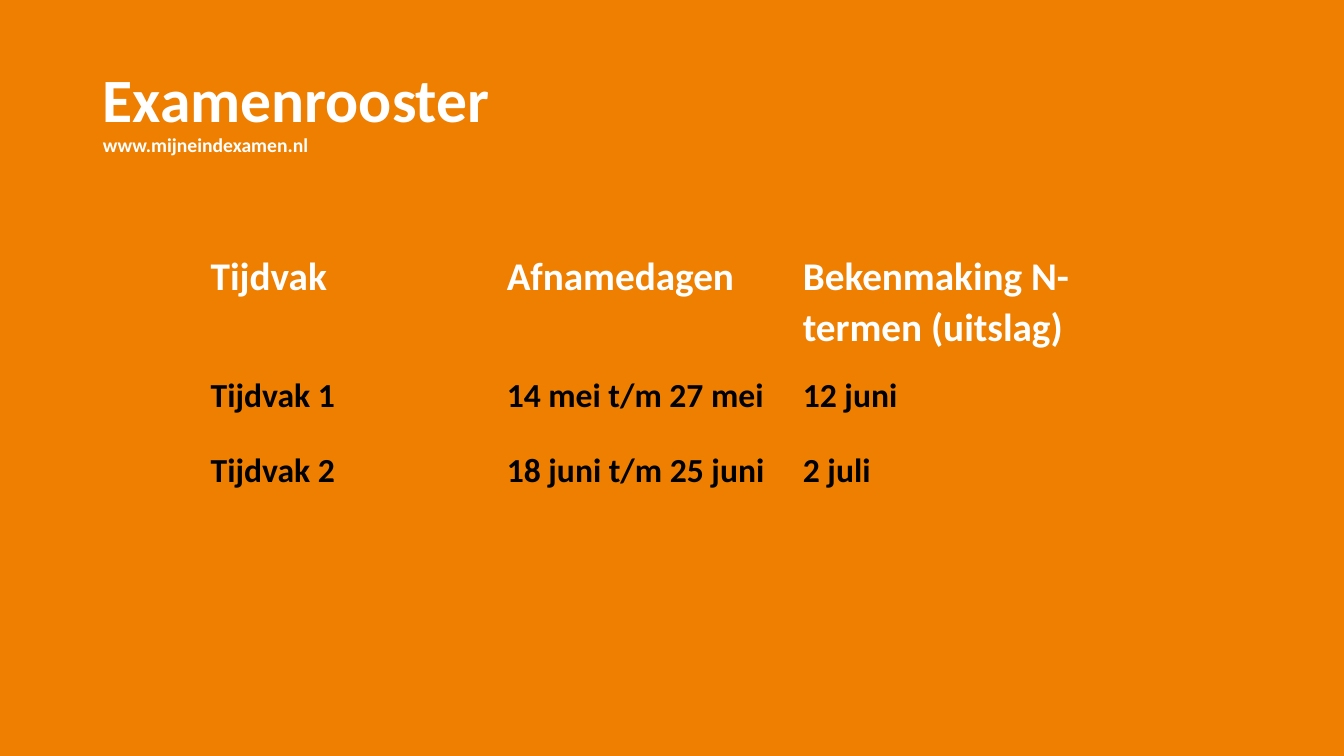
from lxml import etree
from pptx import Presentation
from pptx import util as u
from pptx.dml.color import RGBColor
from pptx.enum import text
from pptx.oxml.ns import qn

COLORS = {"orange": "EE7F00", "white": "FFFFFF", "black": "000000"}
FONT = "Calibri"
SCHEDULE = [
    ["Tijdvak", "Afnamedagen", "Bekenmaking N-termen (uitslag)"],
    ["Tijdvak 1", "14 mei t/m 27 mei", "12 juni"],
    ["Tijdvak 2", "18 juni t/m 25 juni", "2 juli"],
    ["", "", ""],
]
ROW_HEIGHTS = [1.22, 0.74, 0.6, 0.6]


def add_run(paragraph, words, size, color="white", bold=True):
    run = paragraph.add_run()
    run.text = words
    run.font.name = FONT
    run.font.size = u.Pt(size)
    run.font.bold = bold
    run.font.color.rgb = RGBColor.from_string(COLORS[color])


def add_title(slide, left, top, width, height):
    title = slide.shapes.title
    title.left, title.top = u.Inches(left), u.Inches(top)
    title.width, title.height = u.Inches(width), u.Inches(height)
    frame = title.text_frame
    frame.word_wrap = True
    frame.auto_size = text.MSO_AUTO_SIZE.NONE
    frame.vertical_anchor = text.MSO_ANCHOR.MIDDLE
    paragraph = frame.paragraphs[0]
    paragraph.alignment = text.PP_ALIGN.LEFT
    paragraph.line_spacing = 0.9
    add_run(paragraph, "Examenrooster", 44)
    paragraph.add_line_break()
    add_run(paragraph, "www.mijneindexamen.nl", 14)


def set_borders(cell, color, width=0.5):
    properties = cell._tc.get_or_add_tcPr()
    for side in ("a:lnL", "a:lnR", "a:lnT", "a:lnB"):
        line = etree.SubElement(properties, qn(side), w=str(u.Pt(width)))
        fill = etree.SubElement(line, qn("a:solidFill"))
        etree.SubElement(fill, qn("a:srgbClr"), val=COLORS[color])


def format_cell(cell, words, size, color):
    set_borders(cell, "orange")
    cell.fill.background()
    cell.margin_left = cell.margin_right = u.Inches(0.07)
    cell.margin_top = cell.margin_bottom = 0
    if words:
        paragraph = cell.text_frame.paragraphs[0]
        paragraph.line_spacing = 1.07
        paragraph.space_after = u.Pt(8)
        add_run(paragraph, words, size, color)


def add_schedule(slide, left, top, width):
    columns = len(SCHEDULE[0])
    table = slide.shapes.add_table(
        len(SCHEDULE), columns, u.Inches(left), u.Inches(top),
        u.Inches(width), u.Inches(sum(ROW_HEIGHTS))).table
    table.horz_banding = False
    for column in table.columns:
        column.width = u.Inches(width / columns)
    for row_index, (row, height) in enumerate(zip(SCHEDULE, ROW_HEIGHTS)):
        table.rows[row_index].height = u.Inches(height)
        size, color = (24, "black") if row_index else (28, "white")
        for column_index, words in enumerate(row):
            format_cell(table.cell(row_index, column_index), words, size, color)


def main():
    presentation = Presentation()
    presentation.slide_width = u.Inches(13.33)
    presentation.slide_height = u.Inches(7.5)
    slide = presentation.slides.add_slide(presentation.slide_layouts[5])
    background = slide.background.fill
    background.solid()
    background.fore_color.rgb = RGBColor.from_string(COLORS["orange"])
    add_title(slide, 0.92, 0.4, 11.5, 1.45)
    add_schedule(slide, 2.02, 2.48, 8.81)
    presentation.save("out.pptx")


if __name__ == "__main__":
    main()
